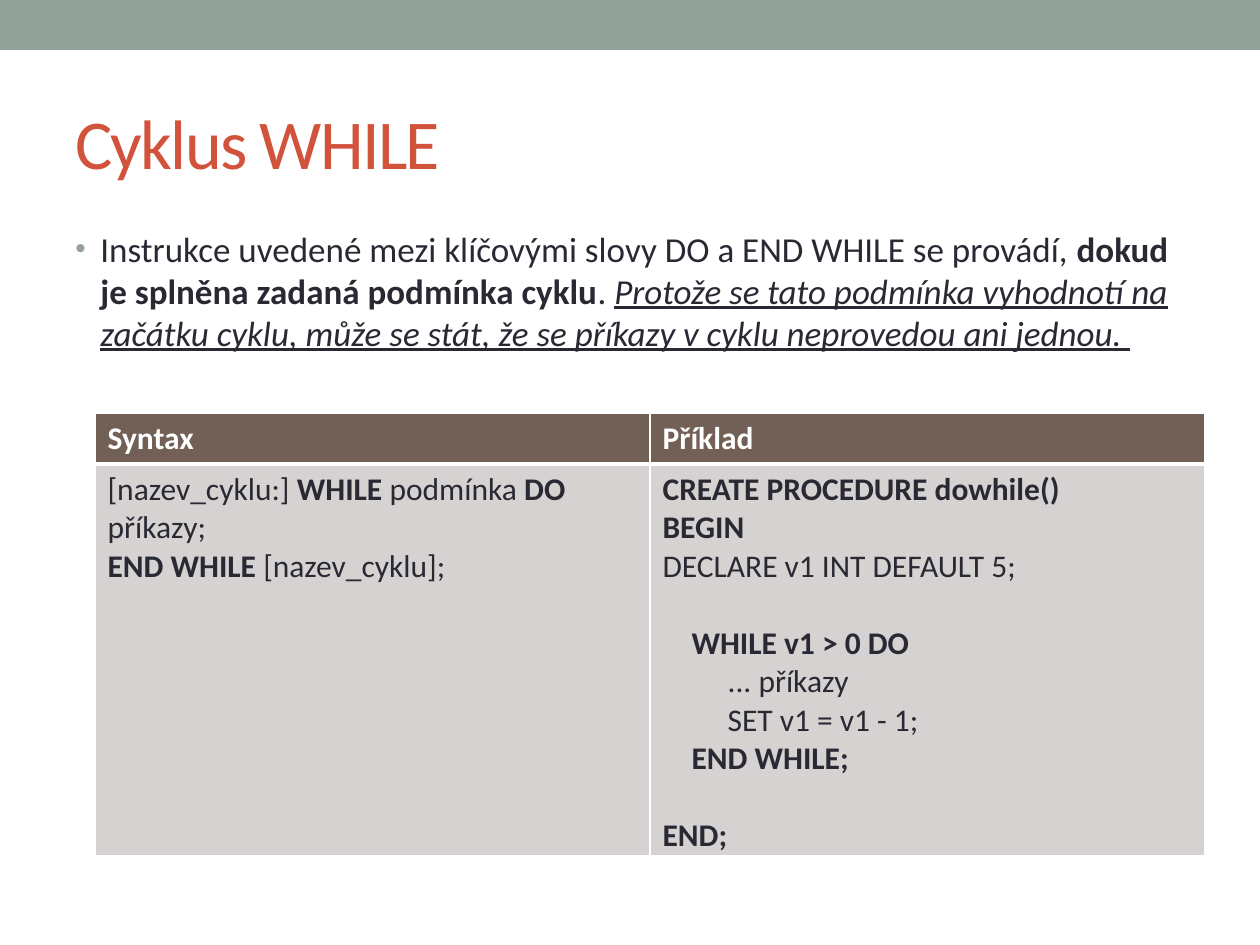
from dataclasses import dataclass

from lxml import etree
from pptx import Presentation, util as u
from pptx.dml.color import RGBColor
from pptx.enum import shapes, text
from pptx.oxml import ns

EMU_PER_PX = 914400 / 126
FONT = "Calibri"
COLORS = {
    "band": "93A299",
    "title": "D2533C",
    "text": "292934",
    "white": "FFFFFF",
    "header": "726056",
    "body": "D5D2D1",
}


@dataclass(frozen=True)
class Run:
    text: str
    bold: bool = False
    italic: bool = False
    underline: bool = False


@dataclass(frozen=True)
class Line:
    runs: tuple[Run, ...]
    indent: int = 0
    space_before: float = 0


@dataclass(frozen=True)
class TableRow:
    height: int
    fill: str
    color: str
    borders: dict[str, int]
    cells: tuple[tuple[Line, ...], ...]


def px(length: int) -> u.Emu:
    return u.Emu(round(length * EMU_PER_PX))


def rgb(name: str) -> RGBColor:
    return RGBColor.from_string(COLORS[name])


def line(content: str, bold: bool = False, indent: int = 0, space_before: float = 0) -> Line:
    return Line((Run(content, bold),), indent, space_before)


def add_text(paragraph, content: str, *, size: int, color: str, bold: bool = False,
             italic: bool = False, underline: bool = False, spacing: int = 0) -> None:
    run = paragraph.add_run()
    run.text = content
    font = run.font
    font.name, font.size = FONT, u.Pt(size)
    font.bold, font.italic, font.underline = bold, italic, underline
    font.color.rgb = rgb(color)
    if spacing:
        run._r.get_or_add_rPr().set("spc", str(spacing))


def add_lines(frame, lines: tuple[Line, ...], size: int, color: str) -> None:
    for index, item in enumerate(lines):
        paragraph = frame.add_paragraph() if index else frame.paragraphs[0]
        paragraph.space_before = u.Pt(item.space_before)
        if item.indent:
            paragraph._p.get_or_add_pPr().set("marL", str(px(item.indent)))
        for run in item.runs:
            add_text(paragraph, run.text, size=size, color=color, bold=run.bold,
                     italic=run.italic, underline=run.underline)


def add_box(slide, left: int, top: int, width: int, height: int, anchor):
    frame = slide.shapes.add_textbox(px(left), px(top), px(width), px(height)).text_frame
    frame.word_wrap = True
    frame.vertical_anchor = anchor
    return frame


def add_bullet(paragraph, hanging: int) -> None:
    properties = paragraph._p.get_or_add_pPr()
    properties.set("marL", str(px(hanging)))
    properties.set("indent", str(-px(hanging)))
    color = etree.SubElement(properties, ns.qn("a:buClr"))
    etree.SubElement(color, ns.qn("a:srgbClr"), val=COLORS["band"])
    etree.SubElement(properties, ns.qn("a:buSzPct"), val="85000")
    etree.SubElement(properties, ns.qn("a:buFont"), typeface="Arial")
    etree.SubElement(properties, ns.qn("a:buChar"), char="•")


def set_borders(cell, widths: dict[str, int]) -> None:
    properties = cell._tc.get_or_add_tcPr()
    for side, width in widths.items():
        border = etree.SubElement(properties, ns.qn(f"a:ln{side}"), w=str(u.Pt(width)))
        fill = etree.SubElement(border, ns.qn("a:solidFill"))
        etree.SubElement(fill, ns.qn("a:srgbClr"), val=COLORS["white"])


def add_code_table(slide, left: int, top: int, column_width: int,
                   rows: tuple[TableRow, ...]) -> None:
    columns = len(rows[0].cells)
    table = slide.shapes.add_table(
        len(rows), columns, px(left), px(top),
        px(column_width * columns), px(sum(row.height for row in rows))).table
    for column in table.columns:
        column.width = px(column_width)
    for row_index, row in enumerate(rows):
        table.rows[row_index].height = px(row.height)
        for column_index, lines in enumerate(row.cells):
            cell = table.cell(row_index, column_index)
            set_borders(cell, row.borders)
            cell.fill.solid()
            cell.fill.fore_color.rgb = rgb(row.fill)
            add_lines(cell.text_frame, lines, 18, row.color)


INTRODUCTION = Line((
    Run("Instrukce uvedené mezi klíčovými slovy DO a END WHILE se provádí, "),
    Run("dokud je splněna zadaná podmínka cyklu", bold=True),
    Run(". "),
    Run("Protože se tato podmínka vyhodnotí na začátku cyklu, může se stát, "
        "že se příkazy v cyklu neprovedou ani jednou. ", italic=True, underline=True),
), space_before=4)

SYNTAX = (
    Line((Run("[nazev_cyklu:] "), Run("WHILE", bold=True),
          Run(" podmínka "), Run("DO", bold=True))),
    line("příkazy;"),
    Line((Run("END WHILE", bold=True), Run(" [nazev_cyklu];"))),
)

BLANK_LINE = 22  # points, one line of 18 pt text
EXAMPLE = (
    line("CREATE PROCEDURE dowhile()", bold=True),
    line("BEGIN", bold=True),
    line("DECLARE v1 INT DEFAULT 5;"),
    line("WHILE v1 > 0 DO", bold=True, indent=29, space_before=BLANK_LINE),
    line("... příkazy", indent=65),
    line("SET v1 = v1 - 1;", indent=65),
    line("END WHILE;", bold=True, indent=29),
    line("END;", bold=True, space_before=BLANK_LINE),
)

ROWS = (
    TableRow(51, "header", "white", {"L": 1, "R": 1, "T": 1, "B": 3},
             ((line("Syntax", bold=True),), (line("Příklad", bold=True),))),
    TableRow(391, "body", "text", {"L": 1, "R": 1, "T": 3, "B": 1}, (SYNTAX, EXAMPLE)),
)


def main() -> None:
    presentation = Presentation()
    presentation.slide_width, presentation.slide_height = px(1260), px(945)
    slide = presentation.slides.add_slide(presentation.slide_layouts[6])

    # Top band
    band = slide.shapes.add_shape(shapes.MSO_SHAPE.RECTANGLE, 0, 0, px(1260), px(50))
    band.shadow.inherit = False
    band.fill.solid()
    band.fill.fore_color.rgb = rgb("band")
    band.line.fill.background()

    # Title
    title = add_box(slide, 63, 73, 1134, 136, text.MSO_ANCHOR.MIDDLE)
    add_text(title.paragraphs[0], "Cyklus WHILE", size=40, color="title", spacing=-100)

    # Introduction
    introduction = add_box(slide, 63, 221, 1134, 672, text.MSO_ANCHOR.TOP)
    add_lines(introduction, (INTRODUCTION,), 20, "text")
    add_bullet(introduction.paragraphs[0], 25)

    # Syntax and example
    add_code_table(slide, 95, 413, 555, ROWS)

    presentation.save("out.pptx")


if __name__ == "__main__":
    main()
